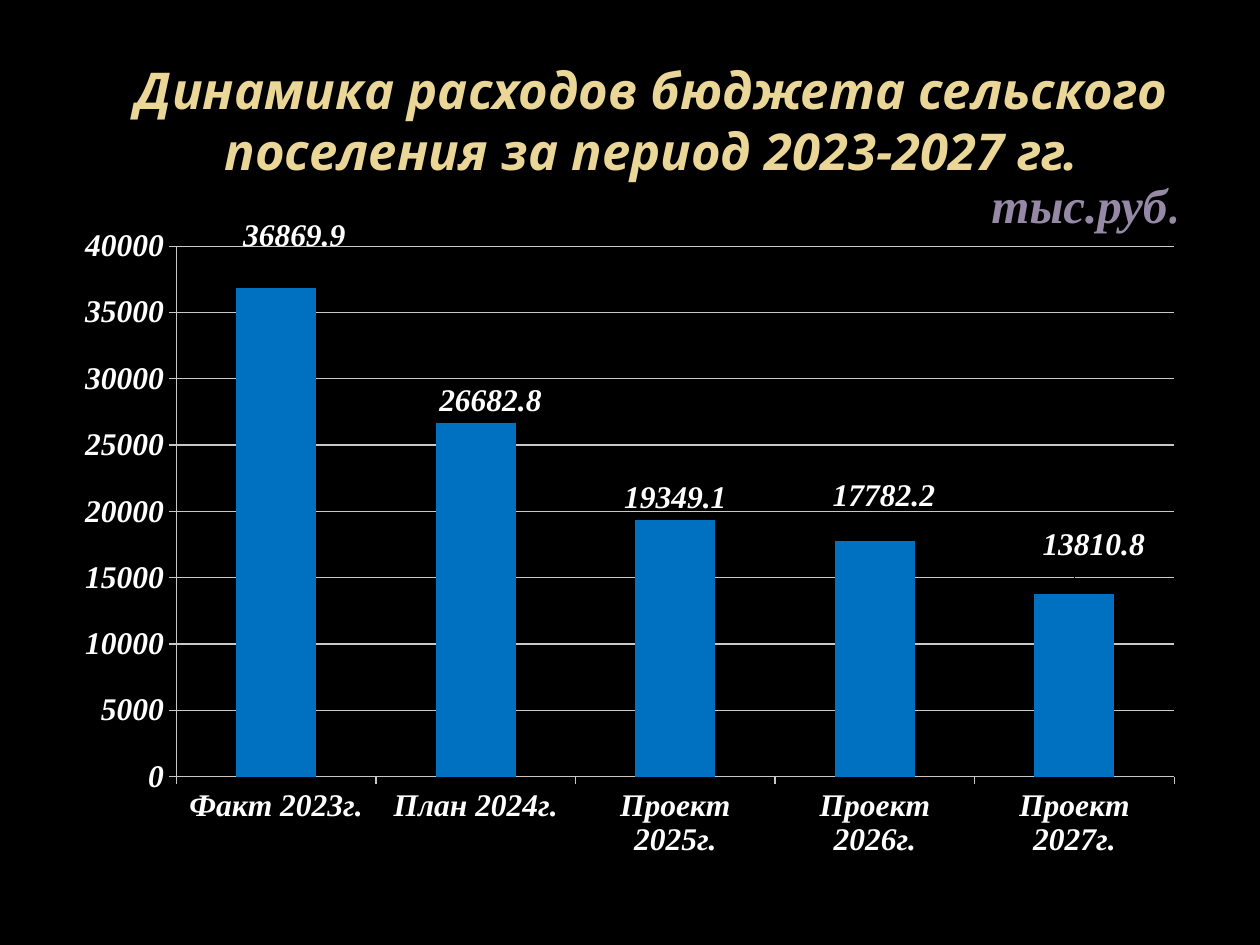
from dataclasses import dataclass

from pptx import Presentation
from pptx.chart.data import CategoryChartData
from pptx.dml.color import RGBColor
from pptx.enum.chart import XL_CHART_TYPE, XL_LABEL_POSITION, XL_TICK_MARK
from pptx.enum.text import MSO_ANCHOR, PP_ALIGN
from pptx.oxml import parse_xml
from pptx.oxml.ns import nsdecls
from pptx.util import Inches, Pt


@dataclass(frozen=True)
class Theme:
    back: str = "000000"
    title: str = "EAD696"
    unit: str = "9689A6"
    text: str = "FFFFFF"
    line: str = "C8C8C8"
    bar: str = "0070C0"
    head: str = "Open Sans"
    body: str = "Times New Roman"
    dot: str = "TeX Gyre Pagella"
    big: int = 29
    mid: int = 28
    small: int = 18


THEME = Theme()
COSTS = [
    ("Факт 2023г.", 36869.9, (0.016, -0.046)),
    ("План 2024г.", 26682.8, (0.013, 0)),
    ("Проект 2025г.", 19349.1, (0, 0)),
    ("Проект 2026г.", 17782.2, (0.008, -0.035)),
    ("Проект 2027г.", 13810.8, (0.017, -0.04)),
]


def color(value):
    return RGBColor.from_string(value)


def style(font, name, size, tint):
    font.name = name
    font.size = Pt(size)
    font.bold = True
    font.italic = True
    font.color.rgb = color(tint)


def add_text(slide, box, text, name, size, tint, align):
    frame = slide.shapes.add_textbox(*map(Inches, box)).text_frame
    frame.word_wrap = True
    frame.vertical_anchor = MSO_ANCHOR.MIDDLE
    para = frame.paragraphs[0]
    para.alignment = align
    para.add_run().text = text
    style(para.font, name, size, tint)
    return para


def layout(**parts):
    tags = "".join(f'<c:{key} val="{val}"/>' for key, val in parts.items())
    return parse_xml(
        f'<c:layout {nsdecls("c")}><c:manualLayout>{tags}</c:manualLayout></c:layout>'
    )


def set_line(line):
    line.color.rgb = color(THEME.line)
    line.width = Pt(0.75)


def set_axis(axis):
    axis.major_tick_mark = XL_TICK_MARK.OUTSIDE
    axis.minor_tick_mark = XL_TICK_MARK.NONE
    set_line(axis.format.line)
    style(axis.tick_labels.font, THEME.body, THEME.small, THEME.text)


def set_labels(chart, series):
    for i in range(len(COSTS)):
        label = series.points[i].data_label
        style(label.font, THEME.body, THEME.small, THEME.text)
        label.position = XL_LABEL_POSITION.OUTSIDE_END
    for node, (_, _, (x, y)) in zip(chart.element.xpath(".//c:dLbl"), COSTS):
        if x or y:
            node.insert(1, layout(x=x, y=y))


def add_chart(slide):
    data = CategoryChartData(number_format="0.0")
    data.categories = [name for name, _, _ in COSTS]
    data.add_series("Series 1", [cost for _, cost, _ in COSTS])
    box = map(Inches, (0.5, 1.72, 9, 5.2))
    chart = slide.shapes.add_chart(XL_CHART_TYPE.COLUMN_CLUSTERED, *box, data).chart
    chart.has_legend = False
    chart.has_title = False
    style(chart.font, THEME.body, THEME.small, THEME.text)

    plot = chart.plots[0]
    plot.gap_width = 150
    plot.vary_by_categories = False
    series = plot.series[0]
    series.format.fill.solid()
    series.format.fill.fore_color.rgb = color(THEME.bar)
    set_labels(chart, series)

    set_axis(chart.category_axis)
    axis = chart.value_axis
    set_axis(axis)
    axis.minimum_scale = 0
    axis.maximum_scale = 40000
    axis.major_unit = 5000
    axis.tick_labels.number_format = "0"
    axis.tick_labels.number_format_is_linked = False
    axis.has_major_gridlines = True
    set_line(axis.major_gridlines.format.line)

    area = chart.element.xpath(".//c:plotArea")[0]
    for old in area.xpath("./c:layout"):
        area.remove(old)
    area.insert(0, layout(layoutTarget="inner", xMode="edge", yMode="edge",
                          x=0.1, y=0.045, w=0.88, h=0.81))


def main():
    deck = Presentation()
    deck.slide_width = Inches(10)
    deck.slide_height = Inches(7.5)
    slide = deck.slides.add_slide(deck.slide_layouts[6])
    slide.background.fill.solid()
    slide.background.fill.fore_color.rgb = color(THEME.back)
    add_text(slide, (0.35, 0.36, 9.65, 1.18),
             "Динамика расходов бюджета сельского поселения за период 2023-2027 гг.",
             THEME.head, THEME.big, THEME.title, PP_ALIGN.CENTER)
    add_chart(slide)
    unit = add_text(slide, (7.27, 1.33, 2.19, 0.57), "тыс.руб",
                    THEME.body, THEME.mid, THEME.unit, PP_ALIGN.RIGHT)
    dot = unit.add_run()
    dot.text = "."
    dot.font.name = THEME.dot
    deck.save("out.pptx")


if __name__ == "__main__":
    main()
